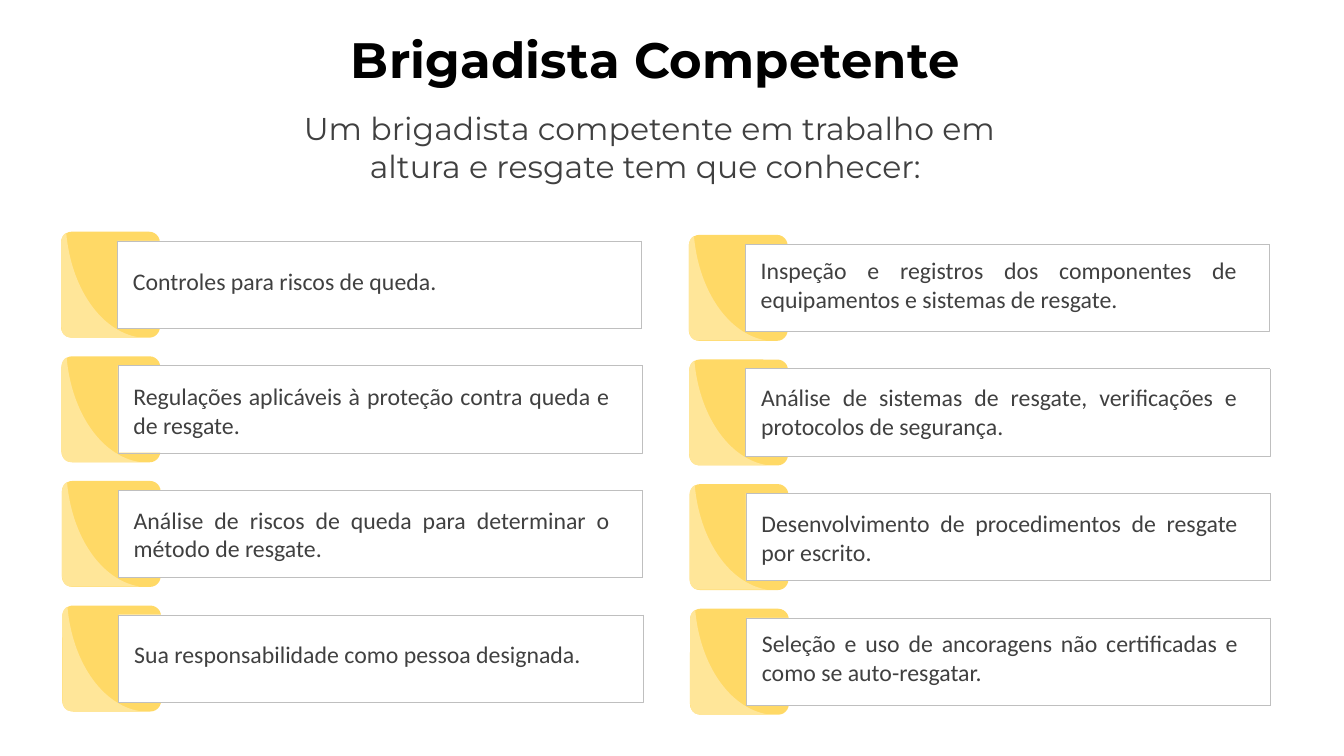
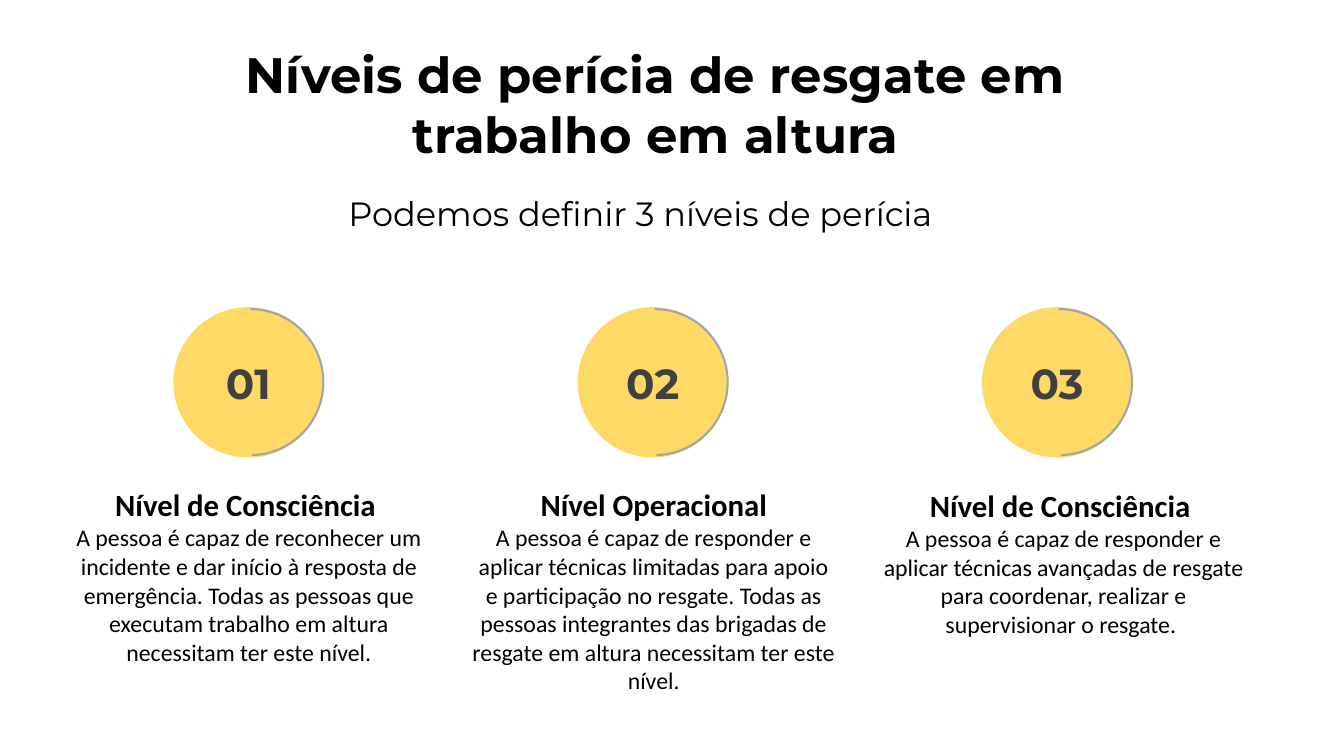
from dataclasses import dataclass

from lxml.etree import SubElement
from pptx import Presentation
from pptx.dml.color import RGBColor
from pptx.enum.dml import MSO_LINE_DASH_STYLE as Dash
from pptx.enum.shapes import MSO_SHAPE as Preset
from pptx.enum.text import MSO_ANCHOR as Anchor, PP_ALIGN as Align
from pptx.oxml.ns import qn
from pptx.util import Cm, Pt

COLORS = {
    "black": "000000",
    "text": "404040",
    "white": "FFFFFF",
    "border": "BFBFBF",
    "yellow": "FFD966",
    "pale": "FFE699",
    "arc": "A5A5A5",
}
HEADING_FONT = "Montserrat"
BODY_FONT = "Calibri"

CARD_LEFTS = (1.54, 17.36)
CARD_TOPS = (5.84, 5.92)
CARD_PITCH = 3.14
CARD_DRIFT = 0.01
LEVEL_LEFT, LEVEL_TOP, LEVEL_PITCH = 4.37, 7.74, 10.19

SWOOSH_TOP = 0.03
SWOOSH_CORNERS = ((0.13, 0), (0, 0.25), (0, 2.35), (0.21, 2.63), (1.95, 2.63), (0.13, 0))
SWOOSH_HANDLES = {
    0: ((0.05, 0.03), (0, 0.13)),
    2: ((0, 2.52), (0.09, 2.63)),
    4: ((0.99, 2.47), (0.25, 1.37)),
}


@dataclass(frozen=True)
class Area:
    left: float
    top: float
    width: float
    height: float

    def lengths(self) -> tuple:
        return Cm(self.left), Cm(self.top), Cm(self.width), Cm(self.height)


@dataclass(frozen=True)
class TextStyle:
    size: float
    font: str = BODY_FONT
    color: str = "black"
    bold: bool = False
    align: Align = Align.CENTER
    spacing: int = 0


@dataclass(frozen=True)
class Card:
    text: str
    text_drop: float
    text_height: float = 1.7


@dataclass(frozen=True)
class Level:
    name: str
    description: str
    text_left: float
    text_top: float = 12.12


TITLE = TextStyle(35.5, HEADING_FONT, bold=True, spacing=10)
CARD_TEXT = TextStyle(17, color="text", align=Align.JUSTIFY)
NUMBER = TextStyle(30, HEADING_FONT, "text", bold=True)
LEVEL_NAME = TextStyle(22, bold=True)
LEVEL_TEXT = TextStyle(17)

CARD_COLUMNS = (
    (
        Card("Controles para riscos de queda. ", 0.74, 0.99),
        Card("Regulações aplicáveis à proteção contra queda e de resgate. ", 0.52),
        Card("Análise de riscos de queda para determinar o método de resgate.", 0.49),
        Card("Sua responsabilidade como pessoa designada.", 0.74, 0.99),
    ),
    (
        Card("Inspeção e registros dos componentes de equipamentos e sistemas de resgate.", 0.4),
        Card("Análise de sistemas de resgate, verificações e protocolos de segurança. ", 0.46),
        Card("Desenvolvimento de procedimentos de resgate por escrito.", 0.49),
        Card("Seleção e uso de ancoragens não certificadas e como se auto-resgatar. ", 0.38),
    ),
)
LEVELS = (
    Level(
        "Nível de Consciência ",
        "A pessoa é capaz de reconhecer um incidente e dar início à resposta de emergência. "
        "Todas as pessoas que executam trabalho em altura necessitam ter este nível.",
        1.41,
    ),
    Level(
        "Nível Operacional",
        "A pessoa é capaz de responder e aplicar técnicas limitadas para apoio e participação "
        "no resgate. Todas as pessoas integrantes das brigadas de resgate em altura "
        "necessitam ter este nível.",
        11.61,
    ),
    Level(
        "Nível de Consciência ",
        "A pessoa é capaz de responder e aplicar técnicas avançadas de resgate para coordenar, "
        "realizar e supervisionar o resgate. ",
        21.94,
        12.14,
    ),
)


def rgb(name: str) -> RGBColor:
    return RGBColor.from_string(COLORS[name])


def add_text(page, area: Area, *lines: tuple[str, TextStyle], wrap: bool = True,
             inset: tuple[float, float] = (0.25, 0.13), anchor: Anchor = Anchor.TOP) -> None:
    frame = page.shapes.add_textbox(*area.lengths()).text_frame
    frame.word_wrap = wrap
    frame.vertical_anchor = anchor
    frame.margin_left = frame.margin_right = Cm(inset[0])
    frame.margin_top = frame.margin_bottom = Cm(inset[1])
    for index, (text, style) in enumerate(lines):
        para = frame.add_paragraph() if index else frame.paragraphs[0]
        para.alignment = style.align
        span = para.add_run()
        span.text = text
        span.font.size = Pt(style.size)
        span.font.name = style.font
        span.font.bold = style.bold
        span.font.color.rgb = rgb(style.color)
        if style.spacing:
            span.font._element.set("spc", str(style.spacing))


def paint(shape, fill: str, line: str | None = None, width: float = 0) -> None:
    shape.shadow.inherit = False
    shape.fill.solid()
    shape.fill.fore_color.rgb = rgb(fill)
    if line:
        shape.line.color.rgb = rgb(line)
        shape.line.width = Pt(width)
    else:
        shape.line.fill.background()


def add_title(page, text: str, top: float, height: float) -> None:
    add_text(page, Area(4.73, top, 23.6, height), (text, TITLE), inset=(0, 0))


def add_swoosh(group, left: float, top: float) -> None:
    corners = [(Cm(left + x), Cm(top + y)) for x, y in SWOOSH_CORNERS]
    builder = group.shapes.build_freeform(*corners[0])
    builder.add_line_segments(corners[1:], close=True)
    swoosh = builder.convert_to_shape()
    segments = list(swoosh._element.iter(qn("a:lnTo")))
    for index, handles in SWOOSH_HANDLES.items():
        segment = segments[index]
        end = segment[0]
        curve = segment.makeelement(qn("a:cubicBezTo"))
        for x, y in handles:
            SubElement(curve, qn("a:pt"), x=str(Cm(x)), y=str(Cm(y)))
        curve.append(end)
        segment.getparent().replace(segment, curve)
    paint(swoosh, "pale")


def add_card(page, card: Card, left: float, top: float) -> None:
    group = page.shapes.add_group_shape()
    tile = group.shapes.add_shape(Preset.ROUNDED_RECTANGLE, *Area(left, top, 2.49, 2.67).lengths())
    tile.adjustments[0] = 0.108
    paint(tile, "yellow")
    add_swoosh(group, left, top + SWOOSH_TOP)
    panel = page.shapes.add_shape(
        Preset.RECTANGLE, *Area(left + 1.42, top + 0.23, 13.21, 2.2).lengths())
    paint(panel, "white", "border", 0.25)
    panel.line.dash_style = Dash.ROUND_DOT
    add_text(page, Area(left + 1.56, top + card.text_drop, 12.5, card.text_height),
             (card.text, CARD_TEXT))


def add_level(page, level: Level, index: int) -> None:
    left = LEVEL_LEFT + index * LEVEL_PITCH
    group = page.shapes.add_group_shape()
    disc = group.shapes.add_shape(Preset.OVAL, *Area(left, LEVEL_TOP, 3.79, 3.79).lengths())
    paint(disc, "yellow")
    arc = group.shapes.add_shape(
        Preset.ARC, *Area(left + 0.1, LEVEL_TOP + 0.05, 3.68, 3.68).lengths())
    arc.adjustments[0], arc.adjustments[1] = 162, 53.15
    paint(arc, "yellow", "arc", 1.5)
    add_text(page, Area(left + 0.25, LEVEL_TOP + 0.6, 3.28, 2.62), (f"{index + 1:02}", NUMBER),
             inset=(0.25, 0.25), anchor=Anchor.MIDDLE)
    add_text(page, Area(level.text_left, level.text_top, 9.73, 1.37),
             (level.name, LEVEL_NAME), (level.description, LEVEL_TEXT))


def build_competence(page) -> None:
    add_title(page, "Brigadista Competente", 0.73, 1.52)
    add_text(page, Area(6.53, 2.62, 19.69, 1.12),
             ("Um brigadista competente em trabalho em altura e resgate tem que conhecer: ",
              TextStyle(22.5, HEADING_FONT, "text")))
    for left, top, cards in zip(CARD_LEFTS, CARD_TOPS, CARD_COLUMNS):
        for row, card in enumerate(cards):
            add_card(page, card, left + row * CARD_DRIFT, top + row * CARD_PITCH)


def build_levels(page) -> None:
    for index, level in enumerate(LEVELS):
        add_level(page, level, index)
    add_title(page, "Níveis de perícia de resgate em trabalho em altura", 1.11, 3.02)
    add_text(page, Area(8.53, 4.72, 15.44, 1.27),
             ("Podemos definir 3 níveis de perícia",
              TextStyle(24, HEADING_FONT, align=Align.LEFT)), wrap=False)


def main() -> None:
    deck = Presentation()
    deck.slide_width, deck.slide_height = Cm(33.87), Cm(19.05)
    for build in (build_competence, build_levels):
        build(deck.slides.add_slide(deck.slide_layouts[6]))
    deck.save("out.pptx")


if __name__ == "__main__":
    main()
